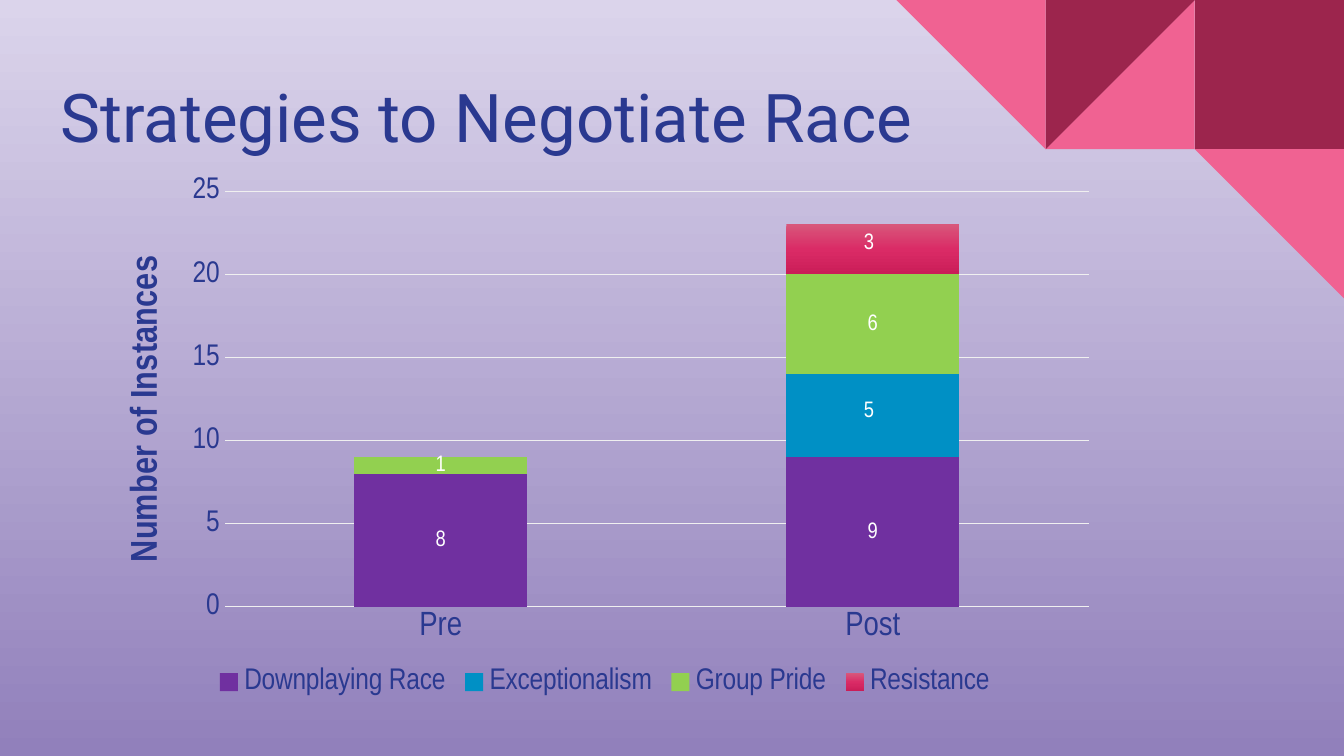
from copy import deepcopy

from lxml.etree import SubElement
from pptx import Presentation
from pptx.chart.data import CategoryChartData
from pptx.dml.color import RGBColor
from pptx.enum.chart import XL_CHART_TYPE, XL_LABEL_POSITION, XL_LEGEND_POSITION, XL_TICK_MARK
from pptx.enum.shapes import MSO_SHAPE
from pptx.enum.text import MSO_ANCHOR, MSO_AUTO_SIZE
from pptx.oxml import parse_xml
from pptx.oxml.ns import nsdecls, qn
from pptx.util import Inches, Pt

NAVY = RGBColor(0x2A, 0x39, 0x90)
WHITE = RGBColor(0xFF, 0xFF, 0xFF)
GRID = RGBColor(0xF0, 0xF0, 0xF0)
WINE = RGBColor(0x9C, 0x25, 0x4D)
PINK = RGBColor(0xF0, 0x62, 0x92)
PURPLE = RGBColor(0x70, 0x30, 0xA0)
BLUE = RGBColor(0x00, 0x90, 0xC5)
GREEN = RGBColor(0x92, 0xD0, 0x50)
BACKGROUND = [(0, RGBColor(0xDB, 0xD4, 0xEB)), (1, RGBColor(0x91, 0x80, 0xBB))]
CRIMSON = [(0, RGBColor(0xD8, 0x57, 0x7B)), (0.5, RGBColor(0xDA, 0x2B, 0x66)),
           (1, RGBColor(0xCA, 0x1D, 0x58))]
NARROW = "Arial Narrow"

# Content
TITLE = "Strategies to Negotiate Race"
AXIS_TITLE = "Number of Instances"
CATEGORIES = ["Pre", "Post"]
SERIES = [  # name, values, fill, labelled by the chart
    ("Downplaying Race", (8, 9), PURPLE, True),
    ("Exceptionalism", (0, 5), BLUE, False),
    ("Group Pride", (1, 6), GREEN, True),
    ("Resistance", (0, 3), CRIMSON, False),
]
FLOATING_LABELS = [("5", 2.89), ("3", 1.64)]  # text, top

# Corner tiles: column, row, shape, rotation, mirrored, fill
TILE, TILE_LEFT = 1.11, 6.67
TILES = [
    (2, 0, MSO_SHAPE.RECTANGLE, 0, False, WINE),
    (1, 0, MSO_SHAPE.RIGHT_TRIANGLE, 0, True, PINK),
    (1, 0, MSO_SHAPE.RIGHT_TRIANGLE, 180, True, WINE),
    (0, 0, MSO_SHAPE.RIGHT_TRIANGLE, 180, False, PINK),
    (2, 1, MSO_SHAPE.RIGHT_TRIANGLE, 180, False, PINK),
]


def set_font(font, size, color=NAVY, name=NARROW, bold=False):
    for key, value in {"size": Pt(size), "name": name, "bold": bold}.items():
        setattr(font, key, value)
    font.color.rgb = color


def set_gradient(fill, stops):
    """Fill from top to bottom with (position, colour) stops."""
    fill.gradient()
    fill.gradient_angle = 270
    gs_list = fill.gradient_stops[0]._gs.getparent()
    while len(gs_list) < len(stops):
        gs_list.append(deepcopy(gs_list[0]))
    for stop, (position, color) in zip(fill.gradient_stops, stops):
        stop.position = position
        stop.color.rgb = color


def set_layout(parent, index, **values):
    """Place a chart part by fractions of the chart's size."""
    for old in parent.findall(qn("c:layout")):
        parent.remove(old)
    layout = parse_xml(f"<c:layout {nsdecls('c')}><c:manualLayout/></c:layout>")
    for key, value in values.items():
        SubElement(layout[0], qn(f"c:{key}")).set("val", str(value))
    parent.insert(index, layout)


def add_text(s, text, box, size, font, color):
    tf = s.shapes.add_textbox(*map(Inches, box)).text_frame
    r = tf.paragraphs[0].add_run()
    r.text = text
    set_font(r.font, size, color, font)
    return tf


# A 16:9 slide
prs = Presentation()
prs.slide_width = Inches(10)
prs.slide_height = Inches(10 * 9 / 16)
s = prs.slides.add_slide(prs.slide_layouts[6])
set_gradient(s.background.fill, BACKGROUND)

# Corner tiles
for col, row, kind, rotation, mirrored, color in TILES:
    sp = s.shapes.add_shape(kind, Inches(TILE_LEFT + col * TILE), Inches(row * TILE),
                            Inches(TILE), Inches(TILE))
    sp.shadow.inherit = False
    sp.fill.solid()
    sp.fill.fore_color.rgb = color
    sp.line.fill.background()
    sp.rotation = rotation
    if mirrored:
        sp._element.spPr.xfrm.set("flipH", "1")

# Title
tf = add_text(s, TITLE, (0.35, 0.48, 7.68, 0.76), 36, "Roboto", NAVY)
tf.word_wrap = True
tf.vertical_anchor = MSO_ANCHOR.MIDDLE
for side in ("left", "right", "top", "bottom"):
    setattr(tf, f"margin_{side}", Inches(0.1))

# Stacked column chart
data = CategoryChartData()
data.categories = CATEGORIES
for name, values, _, _ in SERIES:
    data.add_series(name, values)
chart = s.shapes.add_chart(XL_CHART_TYPE.COLUMN_STACKED, Inches(0.74), Inches(1.24),
                           Inches(7.52), Inches(3.98), data).chart
chart.has_title = False
set_font(chart.font, 10, name="Arial")
plot = chart.plots[0]
plot.gap_width, plot.overlap, plot.vary_by_categories = 150, 100, False
set_layout(plot._element.getparent(), 0, layoutTarget="inner", xMode="edge", yMode="edge",
           x=0.124, y=0.046, w=0.855, h=0.777)

for series, (_, _, fill, labelled) in zip(plot.series, SERIES):
    if isinstance(fill, list):
        set_gradient(series.format.fill, fill)
    else:
        series.format.fill.solid()
        series.format.fill.fore_color.rgb = fill
    if labelled:
        labels = series.data_labels
        labels.show_value = True
        labels.position = XL_LABEL_POSITION.CENTER
        set_font(labels.font, 12, WHITE)

# Axes
cat, val = chart.category_axis, chart.value_axis
for axis, size in ((cat, 18), (val, 16)):
    axis.major_tick_mark = axis.minor_tick_mark = XL_TICK_MARK.NONE
    set_font(axis.tick_labels.font, size)
val.minimum_scale, val.maximum_scale, val.major_unit = 0, 25, 5
val.has_major_gridlines = True
val.format.line.fill.background()
for line in (cat.format.line, val.major_gridlines.format.line):
    line.color.rgb = GRID
    line.width = Pt(0.75)

tf = val.axis_title.text_frame
r = tf.paragraphs[0].add_run()
r.text = AXIS_TITLE
set_font(r.font, 20, bold=True)
tf._txBody.bodyPr.set("rot", "-5400000")
tf._txBody.bodyPr.set("vert", "horz")
set_layout(val.axis_title._element, 1, xMode="edge", yMode="edge", x=0.018, y=0.154)

# Legend
chart.has_legend = True
chart.legend.position = XL_LEGEND_POSITION.BOTTOM
chart.legend.include_in_layout = False
set_font(chart.legend.font, 16)

# Labels laid over the Post column
for text, top in FLOATING_LABELS:
    tf = add_text(s, text, (6.33, top, 0.27, 0.3), 12, NARROW, WHITE)
    tf.word_wrap = False
    tf.auto_size = MSO_AUTO_SIZE.SHAPE_TO_FIT_TEXT

prs.save("out.pptx")
